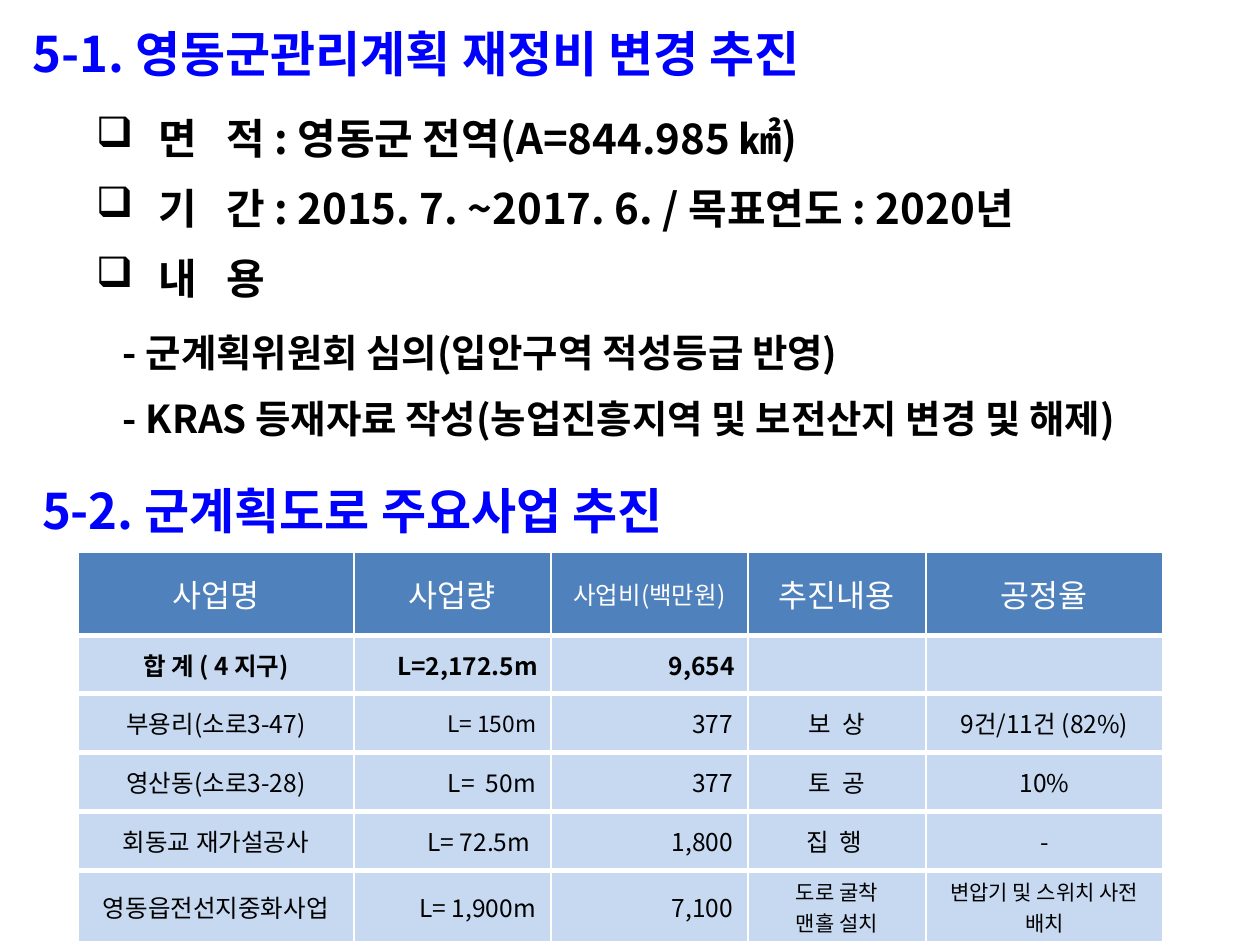
from dataclasses import dataclass

from lxml import etree
from pptx import Presentation
from pptx.dml.color import RGBColor
from pptx.enum.text import MSO_ANCHOR, MSO_AUTO_SIZE, PP_ALIGN
from pptx.oxml.ns import qn
from pptx.util import Emu, Pt

LEFT, CENTER, RIGHT = PP_ALIGN.LEFT, PP_ALIGN.CENTER, PP_ALIGN.RIGHT
TOP, MIDDLE = MSO_ANCHOR.TOP, MSO_ANCHOR.MIDDLE
NO_AUTOFIT = MSO_AUTO_SIZE.NONE


@dataclass(frozen=True)
class Theme:
    font: str = "Noto Sans CJK KR"
    symbol_font: str = "Arial"
    heading: str = "0000FF"
    text: str = "000000"
    white: str = "FFFFFF"
    header_fill: str = "4F81BD"
    body_fill: str = "C6D9F1"
    heading_size: int = 28
    item_size: int = 24
    detail_size: int = 22
    header_size: int = 18
    cell_size: int = 14
    narrow_size: int = 13
    small_size: int = 12


theme = Theme()


def px(value):
    return Emu(round(value * 914400 / 126))


def write(paragraph, text, size, color=theme.text, bold=False, align=LEFT, font=theme.font):
    """Append a run to the paragraph, with one font for Latin and Korean."""
    paragraph.alignment = align
    run = paragraph.add_run()
    run.text = text
    run.font.size = Pt(size)
    run.font.bold = bold
    run.font.name = font
    run.font.color.rgb = RGBColor.from_string(color)
    etree.SubElement(run._r.get_or_add_rPr(), qn("a:ea"), typeface=font)


presentation = Presentation()
presentation.slide_width, presentation.slide_height = px(1260), px(945)
slide = presentation.slides.add_slide(presentation.slide_layouts[5])

# Headings and the project outline
title = slide.shapes.title
title.left, title.top, title.width, title.height = px(33), px(23), px(1194), px(71)
outline = slide.shapes.add_textbox(px(33), px(93), px(1194), px(360))
road_heading = slide.shapes.add_textbox(px(42), px(480), px(1154), px(71))

for shape in (title, outline, road_heading):
    frame = shape.text_frame
    frame.word_wrap = True
    frame.auto_size = NO_AUTOFIT
    frame.vertical_anchor = TOP
    frame.margin_left = frame.margin_top = frame.margin_right = frame.margin_bottom = 0

for shape, text in (
    (title, "5-1. 영동군관리계획 재정비 변경 추진"),
    (road_heading, "5-2. 군계획도로 주요사업 추진"),
):
    write(shape.text_frame.paragraphs[0], text, theme.heading_size, theme.heading, bold=True)

ITEMS = [
    [("면   적 : 영동군 전역(A=844.985 ", theme.font), ("㎢", theme.symbol_font), (")", theme.font)],
    [("기   간 : 2015. 7. ~2017. 6. / 목표연도 : 2020년", theme.font)],
    [("내   용", theme.font)],
]
DETAILS = [
    "- 군계획위원회 심의(입안구역 적성등급 반영)",
    "- KRAS 등재자료 작성(농업진흥지역 및 보전산지 변경 및 해제)",
]

paragraph = outline.text_frame.paragraphs[0]
for index, runs in enumerate(ITEMS):
    if index:
        paragraph = outline.text_frame.add_paragraph()
    paragraph.line_spacing = Pt(40)
    for text, font in runs:
        write(paragraph, text, theme.item_size, bold=True, font=font)
    properties = paragraph._p.get_or_add_pPr()
    properties.set("marL", str(px(126)))
    properties.set("indent", str(px(-63)))
    etree.SubElement(properties, qn("a:buChar"), char="❑")

for index, text in enumerate(DETAILS):
    paragraph = outline.text_frame.add_paragraph()
    paragraph.line_spacing = Pt(38)
    paragraph.space_before = Pt(0 if index else 3)
    write(paragraph, text, theme.detail_size, bold=True)
    paragraph._p.get_or_add_pPr().set("marL", str(px(90)))

# Road project table
COLUMN_WIDTHS = [276, 197, 197, 178, 237]
ROW_HEIGHTS = [49, 58, 59, 59, 59, 49]
BODY_ALIGNMENTS = [CENTER, RIGHT, RIGHT, CENTER, CENTER]
ROWS = [
    ["사업명", "사업량", "사업비(백만원)", "추진내용", "공정율"],
    ["합 계 ( 4 지구)", "L=2,172.5m", "9,654", "", ""],
    ["부용리(소로3-47)", "L= 150m", "377", "보  상", "9건/11건 (82%)"],
    ["영산동(소로3-28)", "L=  50m", "377", "토  공", "10%"],
    ["회동교 재가설공사", "L= 72.5m ", "1,800", "집  행 ", "-"],
    ["영동읍전선지중화사업", "L= 1,900m", "7,100", "도로 굴착\n맨홀 설치", "변압기 및 스위치 사전 배치"],
]
SPECIAL_SIZES = {
    (0, 2): theme.cell_size,
    (2, 1): theme.narrow_size,
    (5, 3): theme.small_size,
    (5, 4): theme.small_size,
}

table = slide.shapes.add_table(
    len(ROWS), len(COLUMN_WIDTHS), px(78), px(552), px(sum(COLUMN_WIDTHS)), px(sum(ROW_HEIGHTS))
).table
for column, width in zip(table.columns, COLUMN_WIDTHS):
    column.width = px(width)
for row, height in zip(table.rows, ROW_HEIGHTS):
    row.height = px(height)

for row_index, texts in enumerate(ROWS):
    is_header = row_index == 0
    base_size = theme.header_size if is_header else theme.cell_size
    for column_index, text in enumerate(texts):
        cell = table.cell(row_index, column_index)
        cell.vertical_anchor = MIDDLE
        cell.margin_left = cell.margin_right = px(15 if row_index > 1 else 13)
        cell.margin_top = cell.margin_bottom = px(6)

        # Borders come before the fill in a:tcPr
        cell_properties = cell._tc.get_or_add_tcPr()
        for side, points in (("L", 1), ("R", 1), ("T", 1 if is_header else 3), ("B", 3)):
            border = etree.SubElement(cell_properties, qn(f"a:ln{side}"), w=str(Pt(points)))
            border_fill = etree.SubElement(border, qn("a:solidFill"))
            etree.SubElement(border_fill, qn("a:srgbClr"), val=theme.white)
        cell.fill.solid()
        cell.fill.fore_color.rgb = RGBColor.from_string(
            theme.header_fill if is_header else theme.body_fill
        )

        for line_index, line in enumerate(text.split("\n") if text else []):
            frame = cell.text_frame
            paragraph = frame.add_paragraph() if line_index else frame.paragraphs[0]
            write(
                paragraph,
                line,
                SPECIAL_SIZES.get((row_index, column_index), base_size),
                color=theme.white if is_header else theme.text,
                bold=row_index == 1,
                align=CENTER if is_header else BODY_ALIGNMENTS[column_index],
            )

presentation.save("out.pptx")
